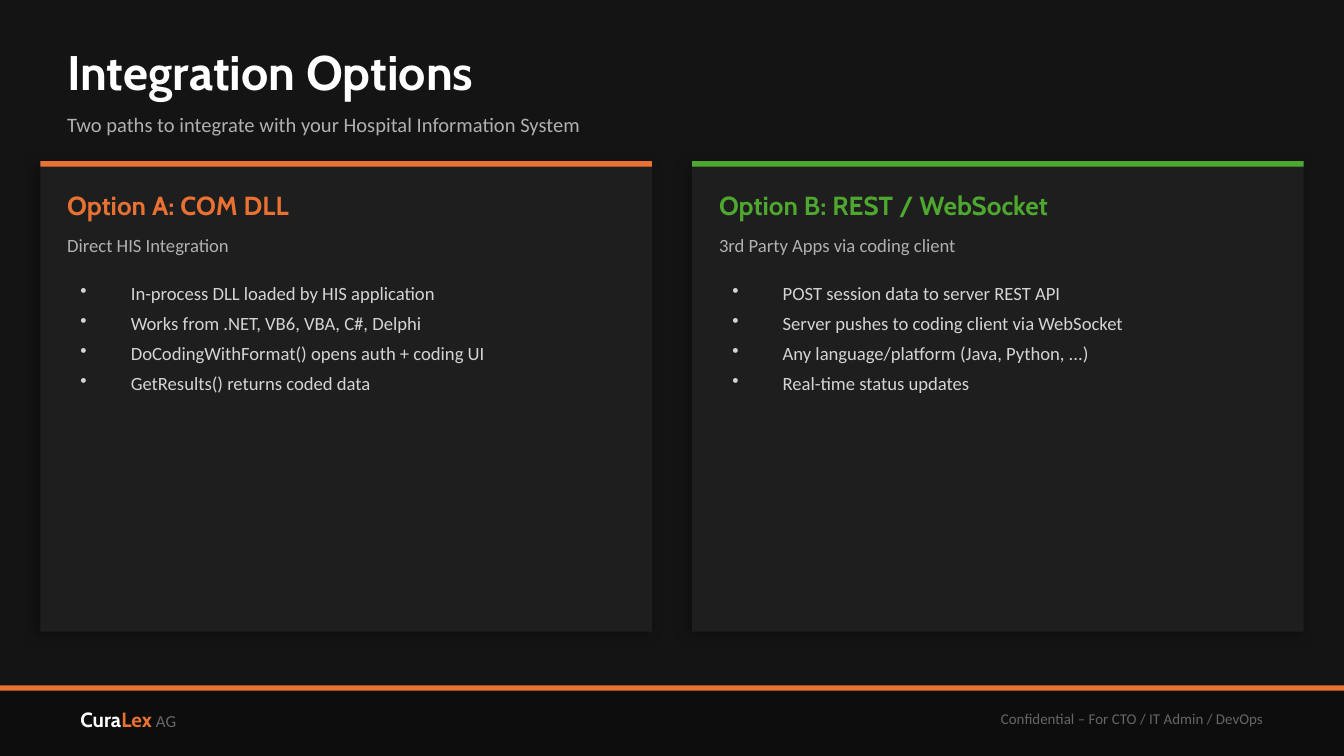
"""Build the integration options slide with two option cards."""
from lxml import etree
from pptx import Presentation
from pptx import util as u
from pptx.dml.color import RGBColor
from pptx.enum import shapes, text
from pptx.oxml import ns

BACKGROUND = RGBColor(0x14, 0x14, 0x14)
FOOTER = RGBColor(0x0D, 0x0D, 0x0D)
CARD = RGBColor(0x1E, 0x1E, 0x1E)
ORANGE = RGBColor(0xE9, 0x71, 0x32)
GREEN = RGBColor(0x4E, 0xA7, 0x2E)
WHITE = RGBColor(0xFF, 0xFF, 0xFF)
LIGHT = RGBColor(0xD4, 0xD4, 0xD4)
MUTED = RGBColor(0xB0, 0xB0, 0xB0)
DIM = RGBColor(0x66, 0x66, 0x66)

HEADING_FONT = "Cabin"
BODY_FONT = "Calibri"
SLIDE_WIDTH = 10
SLIDE_HEIGHT = SLIDE_WIDTH * 9 / 16
FOOTER_TOP = 5.1
CARD_TOP, CARD_WIDTH, CARD_HEIGHT = 1.2, 4.55, 3.5
CARD_LEFT, CARD_GAP, CARD_PADDING = 0.3, 0.3, 0.2
STRIPE_HEIGHT = 0.04
INDENT = 3 / 8

OPTIONS = [
    ("Option A: COM DLL", "Direct HIS Integration", ORANGE, [
        "In-process DLL loaded by HIS application",
        "Works from .NET, VB6, VBA, C#, Delphi",
        "DoCodingWithFormat() opens auth + coding UI",
        "GetResults() returns coded data",
    ]),
    ("Option B: REST / WebSocket", "3rd Party Apps via coding client", GREEN, [
        "POST session data to server REST API",
        "Server pushes to coding client via WebSocket",
        "Any language/platform (Java, Python, ...)",
        "Real-time status updates",
    ]),
]


def add_block(page, left, top, width, height, color):
    """Add a plain filled rectangle."""
    block = page.shapes.add_shape(
        shapes.MSO_SHAPE.RECTANGLE,
        u.Inches(left), u.Inches(top), u.Inches(width), u.Inches(height))
    block.shadow.inherit = False
    block.fill.solid()
    block.fill.fore_color.rgb = color
    block.line.fill.background()
    return block


def add_shadow(block):
    """Give a rectangle a soft black shadow."""
    effects = block._element.spPr.find(ns.qn("a:effectLst"))
    shadow = etree.SubElement(
        effects, ns.qn("a:outerShdw"), blurRad=str(u.Pt(8)),
        dist=str(u.Pt(3)), dir=str(135 * 60000), algn="bl", rotWithShape="0")
    color = etree.SubElement(shadow, ns.qn("a:srgbClr"), val="000000")
    etree.SubElement(color, ns.qn("a:alpha"), val="35000")


def add_box(page, left, top, width, height, inset=True,
            anchor=text.MSO_ANCHOR.MIDDLE):
    """Add an empty wrapping text box and return its text frame."""
    box = page.shapes.add_textbox(
        u.Inches(left), u.Inches(top), u.Inches(width), u.Inches(height))
    frame = box.text_frame
    frame.word_wrap = True
    frame.vertical_anchor = anchor
    if not inset:
        frame.margin_left = frame.margin_right = 0
        frame.margin_top = frame.margin_bottom = 0
    return frame


def add_span(para, wording, size, color, font=BODY_FONT, bold=False):
    """Add one formatted run to a paragraph."""
    span = para.add_run()
    span.text = wording
    span.font.size = u.Pt(size)
    span.font.name = font
    span.font.bold = bold
    span.font.color.rgb = color


def add_heading(page, left, top, width, height, wording, size, color):
    """Add a bold heading line without insets."""
    frame = add_box(page, left, top, width, height, inset=False)
    add_span(frame.paragraphs[0], wording, size, color, HEADING_FONT, True)


def add_caption(page, left, top, width, height, wording, size):
    """Add a muted line below a heading."""
    frame = add_box(page, left, top, width, height, inset=False)
    add_span(frame.paragraphs[0], wording, size, MUTED)


def add_bullets(page, left, top, width, height, items):
    """Add a bulleted list."""
    frame = add_box(page, left, top, width, height,
                    anchor=text.MSO_ANCHOR.TOP)
    for number, item in enumerate(items):
        para = frame.add_paragraph() if number else frame.paragraphs[0]
        props = para._p.get_or_add_pPr()
        props.set("marL", str(u.Inches(INDENT)))
        props.set("indent", str(-u.Inches(INDENT)))
        etree.SubElement(props, ns.qn("a:buSzPct"), val="100000")
        etree.SubElement(props, ns.qn("a:buChar"), char="•")
        para.space_after = u.Pt(4)
        add_span(para, item, 10, LIGHT)


def add_card(page, left, title, caption, color, items):
    """Add an option card with its stripe, headings and list."""
    add_shadow(add_block(page, left, CARD_TOP, CARD_WIDTH, CARD_HEIGHT, CARD))
    add_block(page, left, CARD_TOP, CARD_WIDTH, STRIPE_HEIGHT, color)
    inner_left = left + CARD_PADDING
    inner_width = CARD_WIDTH - 2 * CARD_PADDING
    add_heading(page, inner_left, 1.35, inner_width, 0.35, title, 14, color)
    add_caption(page, inner_left, 1.7, inner_width, 0.25, caption, 10)
    add_bullets(page, inner_left, 2.05, inner_width, 2.5, items)


def add_footer(page):
    """Add the footer band with company name and confidentiality note."""
    add_block(page, 0, FOOTER_TOP, SLIDE_WIDTH, SLIDE_HEIGHT - FOOTER_TOP,
              FOOTER)
    add_block(page, 0, FOOTER_TOP, SLIDE_WIDTH, STRIPE_HEIGHT, ORANGE)
    company = add_box(page, 0.5, 5.15, 3, 0.4).paragraphs[0]
    add_span(company, "Cura", 11, WHITE, HEADING_FONT, True)
    add_span(company, "Lex", 11, ORANGE, HEADING_FONT, True)
    add_span(company, " AG", 9, DIM)
    notice = add_box(page, 5.5, 5.15, 4, 0.4).paragraphs[0]
    notice.alignment = text.PP_ALIGN.RIGHT
    add_span(notice, "Confidential – For CTO / IT Admin / DevOps", 8, DIM)


def main():
    """Create the deck and save it."""
    deck = Presentation()
    deck.slide_width = u.Inches(SLIDE_WIDTH)
    deck.slide_height = u.Inches(SLIDE_HEIGHT)
    page = deck.slides.add_slide(deck.slide_layouts[6])
    page.background.fill.solid()
    page.background.fill.fore_color.rgb = BACKGROUND
    add_footer(page)
    add_heading(page, 0.5, 0.25, 9, 0.55, "Integration Options", 26, WHITE)
    add_caption(page, 0.5, 0.75, 9, 0.35,
                "Two paths to integrate with your Hospital Information System",
                11)
    for column, option in enumerate(OPTIONS):
        add_card(page, CARD_LEFT + column * (CARD_WIDTH + CARD_GAP), *option)
    deck.save("out.pptx")


if __name__ == "__main__":
    main()
